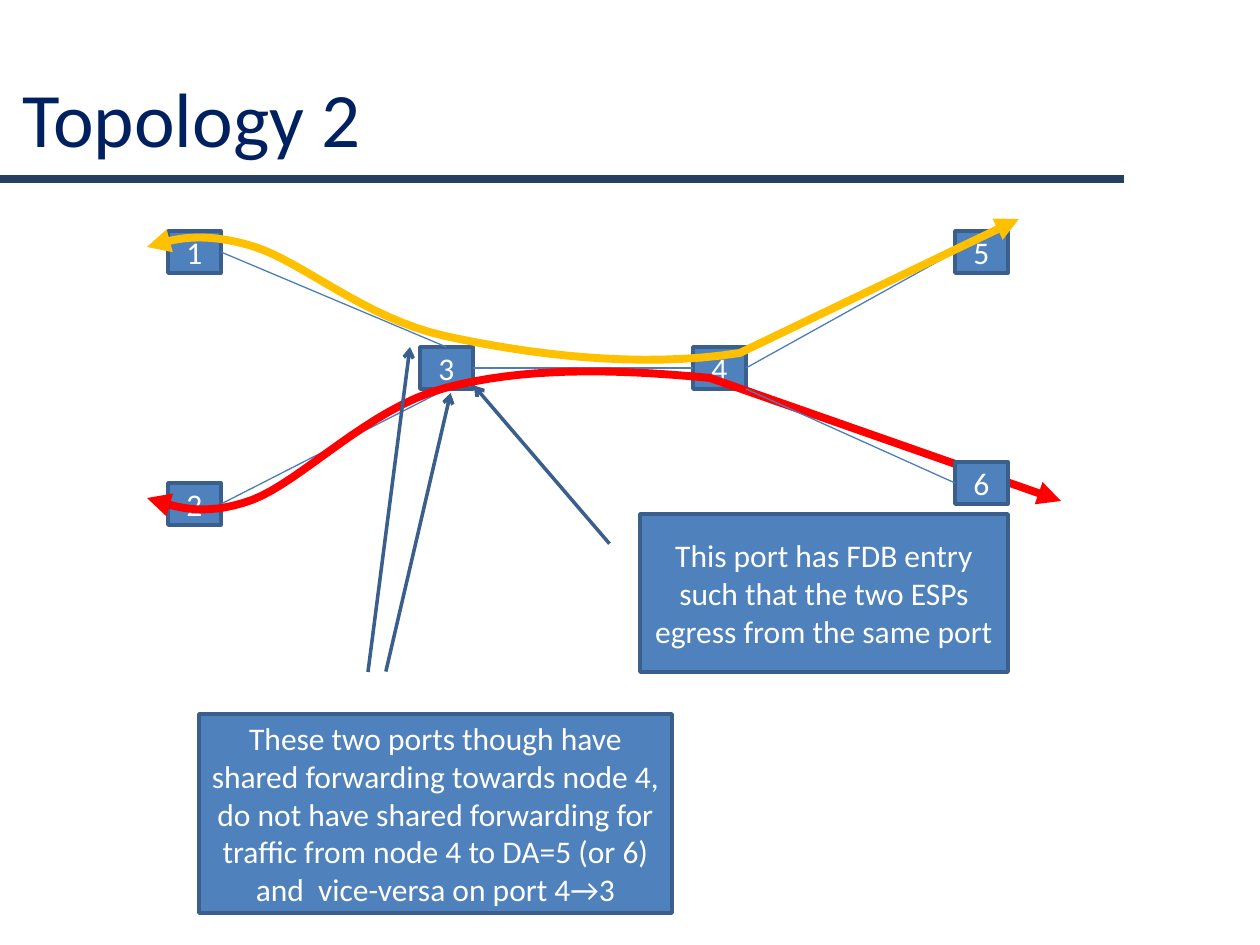
import pptx
import pptx.dml.color
import pptx.enum.shapes
import pptx.enum.text
import pptx.oxml
import pptx.oxml.ns
import pptx.util

RGB = pptx.dml.color.RGBColor
SHAPE = pptx.enum.shapes.MSO_SHAPE
ALIGN = pptx.enum.text.PP_ALIGN
MIDDLE = pptx.enum.text.MSO_ANCHOR.MIDDLE

NAVY = RGB(0x00, 0x20, 0x60)
RULE = RGB(0x25, 0x40, 0x61)
BLUE = RGB(0x4F, 0x81, 0xBD)
EDGE = RGB(0x3A, 0x5F, 0x8C)
LINK = RGB(0x4B, 0x7E, 0xBC)
GOLD = RGB(0xFF, 0xC0, 0x00)
RED = RGB(0xFF, 0x00, 0x00)
WHITE = RGB(0xFF, 0xFF, 0xFF)
FONT = "Calibri"

SCALE = 914400 / 126  # EMU in one px
NODE_W, NODE_H = 53, 42
NODES = {
    "1": (168, 231), "5": (955, 231), "4": (693, 347),
    "3": (420, 347), "2": (168, 483), "6": (955, 462),
}
# Node, then the place on its box as shares of width and height
LINKS = [
    (("1", 1, .5), ("3", .5, 0)),
    (("2", 1, .5), ("3", .5, 1)),
    (("3", 1, .5), ("4", 0, .5)),
    (("4", 1, .5), ("5", 0, .5)),
]
LAST_LINK = (("4", 1, 1), ("6", 0, .5))
# Colour, start, Bezier curves (two controls and an end), straight end
ROUTES = [
    (GOLD, (147, 247), [
        ((173, 239), (202, 231), (252, 246)),
        ((302, 261), (364, 318), (445, 336)),
        ((527, 354), (639, 369), (740, 353)),
    ], (1019, 219)),
    (RED, (147, 498), [
        ((173, 506), (202, 518), (252, 500)),
        ((302, 481), (369, 408), (445, 388)),
        ((521, 368), (607, 368), (710, 378)),
    ], (1061, 501)),
]
# Box, pointer start and end (y, x as shares of the box), text
NOTES = [
    ((640, 514, 368, 158), (.188, -.083, -.814, -.452),
     "This port has FDB entry such that the two ESPs egress from the same port"),
    ((199, 714, 473, 199), (-.213, .395, -1.613, .532),
     "These two ports though have shared forwarding towards node 4, "
     "do not have shared forwarding for traffic from node 4 to DA=5 (or 6) "
     "and  vice-versa on port 4→3"),
]
POINTER = ((368, 672), (410, 347))


def px(*vals):
    return [pptx.util.Emu(round(val * SCALE)) for val in vals]


def stroke(shape, color, width, head=None, tail=None):
    shape.line.color.rgb = color
    shape.line.width = pptx.util.Pt(width)
    for tag, kind in (("a:headEnd", head), ("a:tailEnd", tail)):
        if kind:
            end = pptx.oxml.parse_xml(
                f'<{tag} {pptx.oxml.ns.nsdecls("a")} type="{kind}"/>')
            shape.line._get_or_add_ln().append(end)


def add_line(slide, start, end, color, width, tail=None):
    line = slide.shapes.add_connector(
        pptx.enum.shapes.MSO_CONNECTOR.STRAIGHT, *px(*start, *end))
    stroke(line, color, width, tail=tail)
    line._element.spPr.append(pptx.oxml.parse_xml(
        f'<a:effectLst {pptx.oxml.ns.nsdecls("a")}/>'))


def write(shape, text, size, color, align):
    frame = shape.text_frame
    frame.text = text
    frame.word_wrap = True
    frame.vertical_anchor = MIDDLE
    para = frame.paragraphs[0]
    para.alignment = align
    font = para.runs[0].font
    font.name, font.size = FONT, pptx.util.Pt(size)
    font.color.rgb = color


def add_box(slide, kind, box, text, tail=None):
    shape = slide.shapes.add_shape(kind, *px(*box))
    shape.shadow.inherit = False
    shape.fill.solid()
    shape.fill.fore_color.rgb = BLUE
    stroke(shape, EDGE, 2, tail=tail)
    write(shape, text, 18, WHITE, ALIGN.CENTER)
    return shape


def add_node(slide, name):
    add_box(slide, SHAPE.RECTANGLE, (*NODES[name], NODE_W, NODE_H), name)


def add_link(slide, ends):
    spots = [(NODES[name][0] + NODE_W * across, NODES[name][1] + NODE_H * down)
             for name, across, down in ends]
    add_line(slide, *spots, LINK, 0.75)


def trace(start, curves, steps=16):
    """Return the points along a chain of cubic Bezier curves."""
    points = [start]
    for curve in curves:
        ctrl = (points[-1], *curve)
        for step in range(1, steps + 1):
            t = step / steps
            u = 1 - t
            share = (u ** 3, 3 * u * u * t, 3 * u * t * t, t ** 3)
            points.append(tuple(
                sum(s * c[axis] for s, c in zip(share, ctrl)) for axis in (0, 1)))
    return points


def add_route(slide, color, start, curves, end):
    points = [px(*spot) for spot in trace(start, curves) + [end]]
    path = slide.shapes.build_freeform(*points[0])
    path.add_line_segments(points[1:], close=False)
    shape = path.convert_to_shape()
    shape.shadow.inherit = False
    shape.fill.background()
    stroke(shape, color, 4.5, "triangle", "triangle")


def main():
    deck = pptx.Presentation()
    deck.slide_width, deck.slide_height = px(1260, 945)
    slide = deck.slides.add_slide(deck.slide_layouts[5])

    title = slide.shapes.title
    title.left, title.top, title.width, title.height = px(10, 38, 1134, 157)
    write(title, "Topology 2", 44, NAVY, ALIGN.LEFT)
    add_line(slide, (0, 179), (1124, 179), RULE, 4.5)

    for name in "15432":
        add_node(slide, name)
    for ends in LINKS:
        add_link(slide, ends)
    for route in ROUTES:
        add_route(slide, *route)
    for box, aim, text in NOTES:
        note = add_box(slide, SHAPE.LINE_CALLOUT_1, box, text, "arrow")
        for index, share in enumerate(aim):
            note.adjustments[index] = share
    add_line(slide, *POINTER, EDGE, 2, "arrow")
    add_node(slide, "6")
    add_link(slide, LAST_LINK)
    deck.save("out.pptx")


if __name__ == "__main__":
    main()
